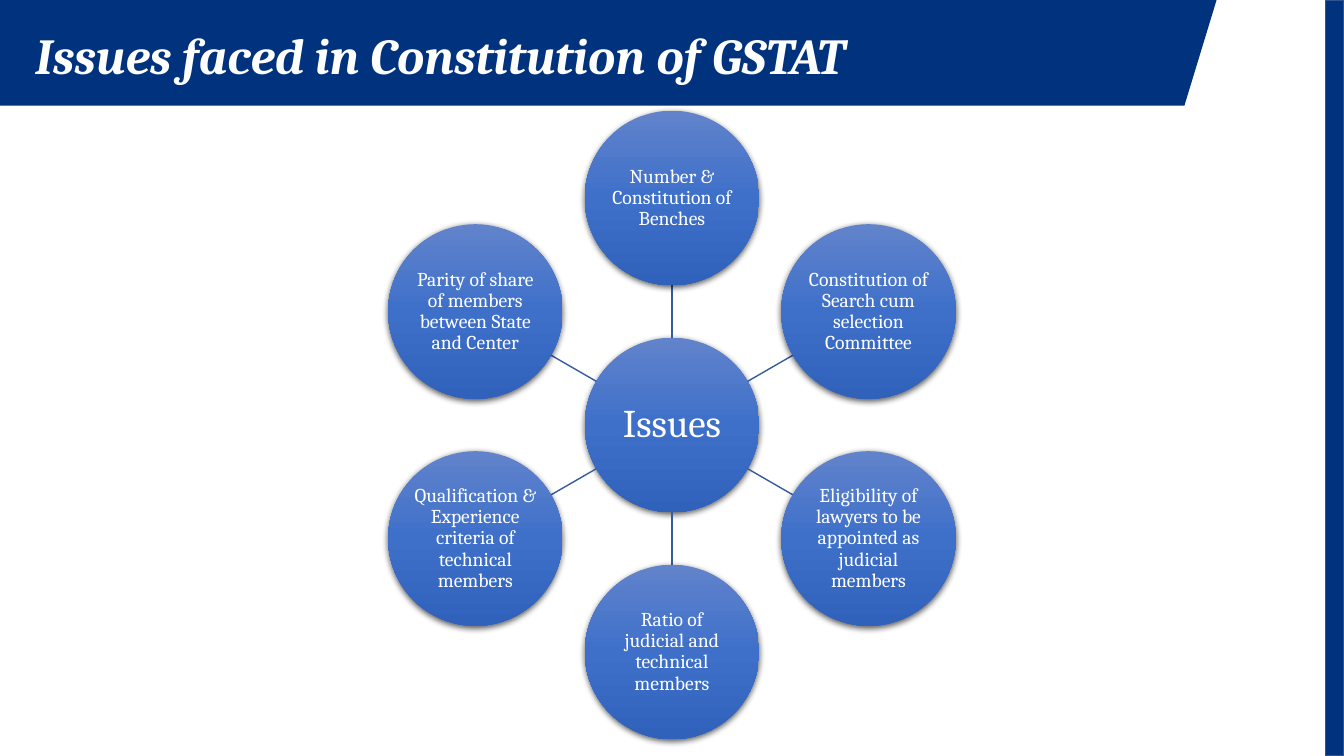
import math

from lxml import etree
from pptx import Presentation
from pptx import util as u
from pptx.dml.color import RGBColor
from pptx.enum import shapes, text
from pptx.oxml import parse_xml
from pptx.oxml.ns import nsdecls, qn

# Content
TITLE = "Issues faced in Constitution of GSTAT"
HUB = "Issues"
ISSUES = [  # clockwise from the top
    "Number & Constitution of Benches",
    "Constitution of Search cum selection Committee",
    "Eligibility of lawyers to be appointed as judicial members",
    "Ratio of judicial and technical members",
    "Qualification & Experience criteria of technical members",
    "Parity of share of members between State and Center",
]

# Style
FONT = "Cambria"
NAVY = RGBColor(0x00, 0x32, 0x7D)
BAR_EDGE = RGBColor(0x32, 0x54, 0x91)
SPOKE = RGBColor(0x36, 0x5B, 0x9D)
WHITE = RGBColor(0xFF, 0xFF, 0xFF)
GRADIENT = [(0, "6183CB"), (50, "3E70CA"), (100, "3062BB")]

# Layout, in centimetres
SLIDE_W, SLIDE_H = 33.87, 19.05
BAND = [(0, 0), (0, 2.66), (29.85, 2.66), (30.66, 0)]
BAR_W = 0.46
CENTER_X, CENTER_Y = SLIDE_W / 2, 10.71
ORBIT = 5.72
DIAMETER = 4.4


def add_run(p, words, size):
    r = p.add_run()
    r.text = words
    r.font.name = FONT
    r.font.size = u.Pt(size)
    r.font.color.rgb = WHITE
    return r


def add_circle(s, x, y, words, size, inset):
    sp = s.shapes.add_shape(
        shapes.MSO_SHAPE.OVAL, u.Cm(x - DIAMETER / 2), u.Cm(y - DIAMETER / 2),
        u.Cm(DIAMETER), u.Cm(DIAMETER))
    sp.line.fill.background()
    sp.shadow.inherit = False
    # Three-stop gradient and soft shadow
    props = sp._element.spPr
    stops = "".join(
        f'<a:gs pos="{pos * 1000}"><a:srgbClr val="{color}"/></a:gs>'
        for pos, color in GRADIENT)
    props.find(qn("a:prstGeom")).addnext(parse_xml(
        f'<a:gradFill {nsdecls("a")} rotWithShape="1"><a:gsLst>{stops}</a:gsLst>'
        '<a:lin ang="5400000" scaled="0"/></a:gradFill>'))
    props.find(qn("a:effectLst")).append(parse_xml(
        f'<a:outerShdw {nsdecls("a")} blurRad="57150" dist="19050" dir="5400000" '
        'algn="ctr" rotWithShape="0"><a:srgbClr val="000000">'
        '<a:alpha val="63000"/></a:srgbClr></a:outerShdw>'))
    # Label
    tf = sp.text_frame
    tf.word_wrap = True
    tf.vertical_anchor = text.MSO_ANCHOR.MIDDLE
    tf.margin_left = tf.margin_right = tf.margin_top = tf.margin_bottom = u.Cm(inset)
    p = tf.paragraphs[0]
    p.alignment = text.PP_ALIGN.CENTER
    p.line_spacing = 0.9
    add_run(p, words, size)


def add_spoke(s, dx, dy):
    near, far = DIAMETER / 2, ORBIT - DIAMETER / 2
    line = s.shapes.add_connector(
        shapes.MSO_CONNECTOR.STRAIGHT,
        u.Cm(CENTER_X + near * dx), u.Cm(CENTER_Y + near * dy),
        u.Cm(CENTER_X + far * dx), u.Cm(CENTER_Y + far * dy))
    line.line.color.rgb = SPOKE
    line.line.width = u.Pt(1)
    etree.SubElement(line._element.spPr, qn("a:effectLst"))


def main():
    prs = Presentation()
    prs.slide_width, prs.slide_height = u.Cm(SLIDE_W), u.Cm(SLIDE_H)
    s = prs.slides.add_slide(prs.slide_layouts[5])

    # Header band and right-hand bar
    corners = [(u.Cm(x), u.Cm(y)) for x, y in BAND]
    outline = s.shapes.build_freeform(*corners[0])
    outline.add_line_segments(corners[1:], close=True)
    band = outline.convert_to_shape()
    band.line.fill.background()
    bar = s.shapes.add_shape(
        shapes.MSO_SHAPE.RECTANGLE, u.Cm(SLIDE_W - BAR_W), 0,
        u.Cm(BAR_W), u.Cm(SLIDE_H))
    bar.line.color.rgb = BAR_EDGE
    bar.line.width = u.Pt(1)
    for sp in (band, bar):
        sp.fill.solid()
        sp.fill.fore_color.rgb = NAVY
        sp.shadow.inherit = False

    # Title, brought in front of the band
    title = s.shapes.title
    title.left, title.top = u.Cm(0.64), u.Cm(0.66)
    title.width, title.height = u.Cm(23.34), u.Cm(1.63)
    s.shapes._spTree.append(title._element)
    tf = title.text_frame
    tf.word_wrap = True
    tf.auto_size = text.MSO_AUTO_SIZE.NONE
    tf.vertical_anchor = text.MSO_ANCHOR.MIDDLE
    p = tf.paragraphs[0]
    p.alignment = text.PP_ALIGN.LEFT
    p.line_spacing = 0.9
    r = add_run(p, TITLE, 36)
    r.font.bold = r.font.italic = True

    # Hub with the issues evenly spaced around it
    add_circle(s, CENTER_X, CENTER_Y, HUB, 28, 0.05)
    for i, issue in enumerate(ISSUES):
        angle = 2 * math.pi * i / len(ISSUES)
        dx, dy = math.sin(angle), -math.cos(angle)
        add_spoke(s, dx, dy)
        add_circle(s, CENTER_X + ORBIT * dx, CENTER_Y + ORBIT * dy, issue, 14, 0.02)

    prs.save("out.pptx")


if __name__ == "__main__":
    main()
